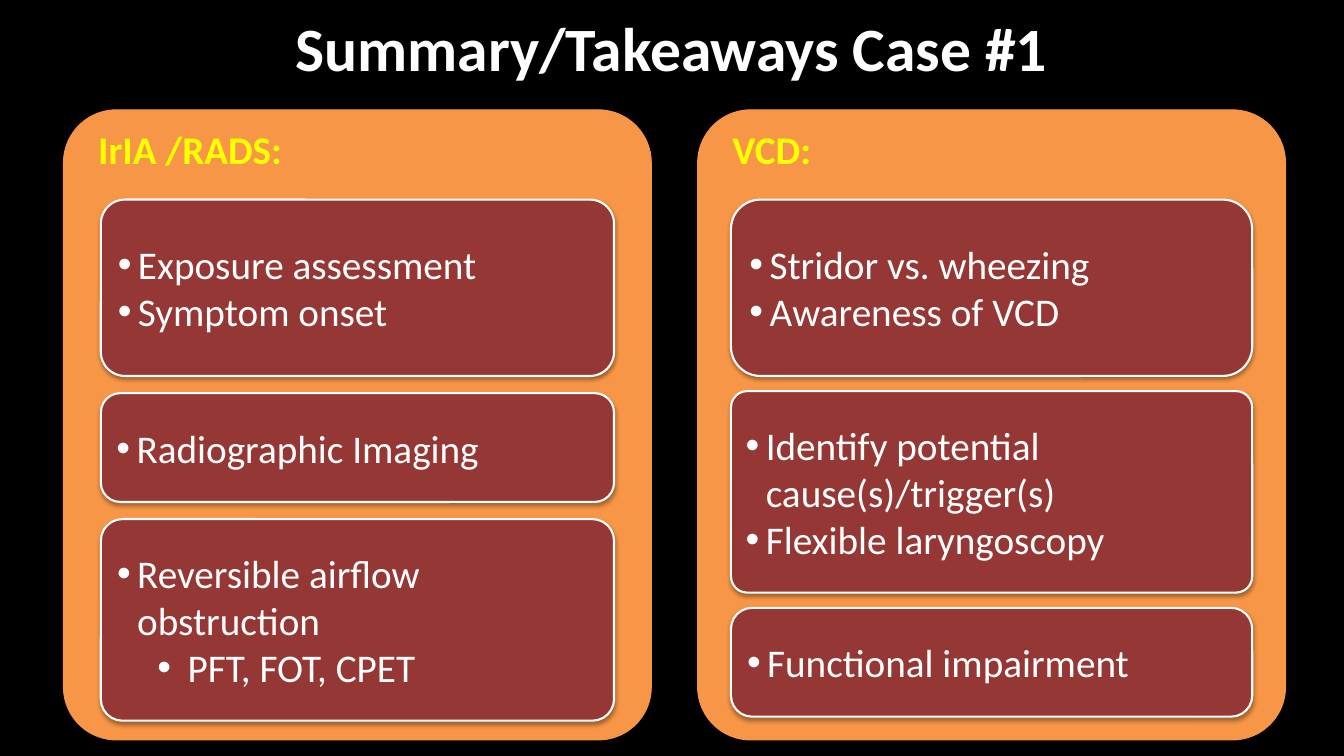
"""Build the Case #1 summary slide: two panels of stacked takeaway cards."""
from lxml.etree import SubElement
from pptx import Presentation
from pptx.dml.color import RGBColor
from pptx.enum.shapes import MSO_SHAPE
from pptx.enum.text import MSO_ANCHOR, PP_ALIGN
from pptx.oxml.ns import qn
from pptx.util import Inches, Pt

ORANGE, MAROON, WHITE, YELLOW = "F79646", "953735", "FFFFFF", "FFFF00"
PANEL_X, PANEL_Y, PANEL_W, PANEL_H, PANEL_STEP = 0.63, 1.09, 5.83, 6.25, 6.29
CARD_Y = 1.98
INDENTS = {1: (0.2, -0.2), 2: (0.7, -0.3)}

# Each panel: heading, card left, card width, gap, cards (height, rounding, bullets)
PANELS = [
    ("IrIA /RADS:", 1.0, 5.09, 0.17, [
        (1.75, 0.137, [("Exposure assessment", 1), ("Symptom onset", 1)]),
        (1.08, 0.178, [("Radiographic Imaging", 1)]),
        (2.0, 0.107, [("Reversible airflow obstruction", 1), ("PFT, FOT, CPET", 2)]),
    ]),
    ("VCD:", 7.25, 5.17, 0.15, [
        (1.75, 0.167, [("Stridor vs. wheezing", 1), ("Awareness of VCD", 1)]),
        (2.0, 0.081, [("Identify potential cause(s)/trigger(s)", 1),
                      ("Flexible laryngoscopy", 1)]),
        (1.08, 0.194, [("Functional impairment", 1)]),
    ]),
]


def add_box(x, y, w, h, rounding, fill, line, weight):
    sp = s.shapes.add_shape(MSO_SHAPE.ROUNDED_RECTANGLE,
                            Inches(x), Inches(y), Inches(w), Inches(h))
    sp.adjustments[0] = rounding
    sp.fill.solid()
    sp.fill.fore_color.rgb = RGBColor.from_string(fill)
    sp.line.color.rgb = RGBColor.from_string(line)
    sp.line.width = Pt(weight)
    sp.shadow.inherit = False
    effects = sp._element.spPr.find(qn("a:effectLst"))
    shadow = SubElement(effects, qn("a:outerShdw"), blurRad=str(Pt(3.1)),
                        dist=str(Pt(1.8)), dir="5400000", rotWithShape="0")
    black = SubElement(shadow, qn("a:srgbClr"), val="000000")
    SubElement(black, qn("a:alpha"), val="35000")
    sp.text_frame.word_wrap = True
    return sp.text_frame


def add_run(p, text, size, colour, bold=False):
    r = p.add_run()
    r.text = text
    r.font.name = "Calibri"
    r.font.size = Pt(size)
    r.font.bold = bold
    r.font.color.rgb = RGBColor.from_string(colour)


prs = Presentation()
prs.slide_width, prs.slide_height = Inches(13.33), Inches(7.5)
s = prs.slides.add_slide(prs.slide_layouts[6])
s.background.fill.solid()
s.background.fill.fore_color.rgb = RGBColor.from_string("000000")

title = s.shapes.add_textbox(0, 0, prs.slide_width, Inches(0.92))
tf = title.text_frame
tf.word_wrap = True
tf.vertical_anchor = MSO_ANCHOR.MIDDLE
tf.paragraphs[0].alignment = PP_ALIGN.CENTER
add_run(tf.paragraphs[0], "Summary/Takeaways Case #1", 44, WHITE, True)

for col, (heading, card_x, card_w, gap, cards) in enumerate(PANELS):
    tf = add_box(PANEL_X + col * PANEL_STEP, PANEL_Y, PANEL_W, PANEL_H,
                 0.09, ORANGE, ORANGE, 0.75)
    tf.vertical_anchor = MSO_ANCHOR.TOP
    tf.margin_left, tf.margin_top = Inches(0.19), 0
    tf.paragraphs[0].alignment = PP_ALIGN.LEFT
    add_run(tf.paragraphs[0], heading, 28, YELLOW, True)

    y = CARD_Y
    for height, rounding, bullets in cards:
        tf = add_box(card_x, y, card_w, height, rounding, MAROON, WHITE, 1.5)
        tf.vertical_anchor = MSO_ANCHOR.MIDDLE
        for i, (text, level) in enumerate(bullets):
            p = tf.add_paragraph() if i else tf.paragraphs[0]
            p.alignment = PP_ALIGN.LEFT
            p.level = level
            left, hang = INDENTS[level]
            pPr = p._p.get_or_add_pPr()
            pPr.set("marL", str(Inches(left)))
            pPr.set("indent", str(Inches(hang)))
            SubElement(pPr, qn("a:buFont"), typeface="Arial")
            SubElement(pPr, qn("a:buChar"), char="•")
            add_run(p, text, 28, WHITE)
        y += height + gap

prs.save("out.pptx")
